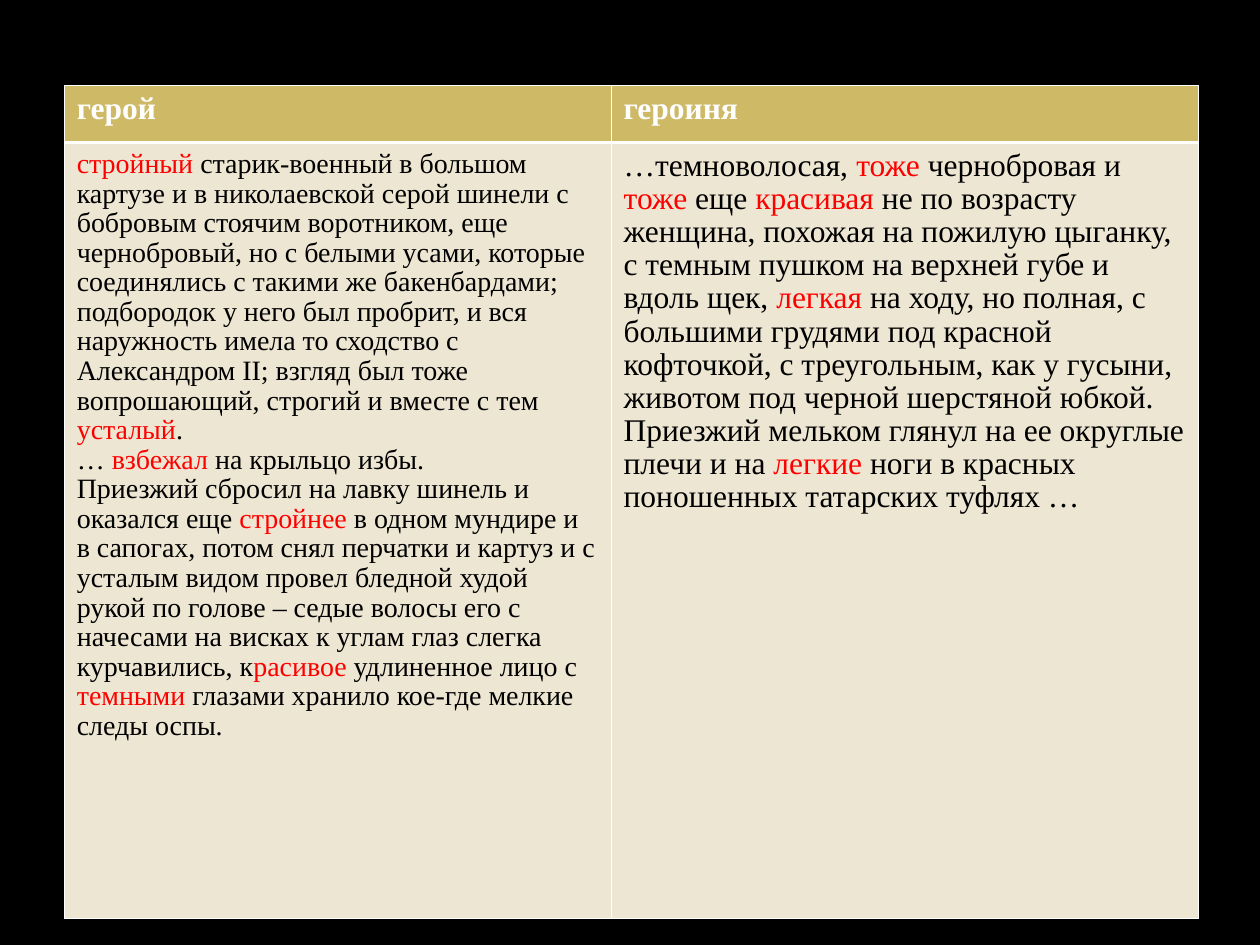
from lxml.etree import SubElement
from pptx import Presentation
from pptx.dml.color import RGBColor
from pptx.oxml.ns import qn
from pptx.util import Inches, Pt

BLACK = RGBColor(0x00, 0x00, 0x00)
WHITE = RGBColor(0xFF, 0xFF, 0xFF)
RED = RGBColor(0xFF, 0x00, 0x00)
GOLD = RGBColor(0xCE, 0xB9, 0x66)
CREAM = RGBColor(0xED, 0xE6, 0xD3)
FONT = "Times New Roman"
THIN, THICK = 0.45, 1.47

# Words between asterisks are red.
HEADS = ["герой", "героиня"]
HERO = [
    "*стройный *старик-военный в большом картузе и в николаевской серой шинели "
    "с бобровым стоячим воротником, еще чернобровый, но с белыми усами, которые "
    "соединялись с такими же бакенбардами; подбородок у него был пробрит, и вся "
    "наружность имела то сходство с Александром II; взгляд был тоже "
    "вопрошающий, строгий и вместе с тем *усталый*.",
    "… *взбежал *на крыльцо избы.",
    "Приезжий сбросил на лавку шинель и оказался еще *стройнее* в одном мундире "
    "и в сапогах, потом снял перчатки и картуз и с усталым видом провел бледной "
    "худой рукой по голове – седые волосы его с начесами на висках к углам глаз "
    "слегка курчавились, к*расивое* удлиненное лицо с *темными* глазами хранило "
    "кое-где мелкие следы оспы.",
]
HEROINE = [
    "…темноволосая, *тоже *чернобровая и *тоже *еще *красивая *не по возрасту "
    "женщина, похожая на пожилую цыганку, с темным пушком на верхней губе и "
    "вдоль щек, *легкая* на ходу, но полная, с большими грудями под красной "
    "кофточкой, с треугольным, как у гусыни, животом под черной шерстяной юбкой.",
    "Приезжий мельком глянул на ее округлые плечи и на *легкие* ноги в красных "
    "поношенных татарских туфлях …",
]
BODIES = [(HERO, 16), (HEROINE, 18)]
LEFT, TOP = 0.51, 0.68
WIDTHS = [4.34, 4.66]
HEIGHTS = [0.45, 6.16]


def write(cell, paras, size=18, color=BLACK, bold=False):
    frame = cell.text_frame
    for i, text in enumerate(paras):
        para = frame.add_paragraph() if i else frame.paragraphs[0]
        para.line_spacing = 0.95
        for j, part in enumerate(text.split("*")):
            if not part:
                continue
            run = para.add_run()
            run.text = part
            font = run.font
            font.name, font.size, font.bold = FONT, Pt(size), bold
            font.color.rgb = RED if j % 2 else color


def style(cell, fill, top, bottom):
    """Set the margins, white borders and fill of a cell."""
    cell.margin_left = cell.margin_right = Inches(0.1)
    cell.margin_top, cell.margin_bottom = Inches(0.06), Inches(0.05)
    props = cell._tc.get_or_add_tcPr()
    for side, width in zip("LRTB", (THIN, THIN, top, bottom)):
        line = SubElement(props, qn(f"a:ln{side}"), w=str(int(Pt(width))))
        solid = SubElement(line, qn("a:solidFill"))
        SubElement(solid, qn("a:srgbClr"), val=str(WHITE))
    cell.fill.solid()
    cell.fill.fore_color.rgb = fill


def main():
    deck = Presentation()
    deck.slide_width, deck.slide_height = Inches(10), Inches(7.5)
    slide = deck.slides.add_slide(deck.slide_layouts[6])
    slide.background.fill.solid()
    slide.background.fill.fore_color.rgb = BLACK

    table = slide.shapes.add_table(
        len(HEIGHTS), len(WIDTHS), Inches(LEFT), Inches(TOP),
        Inches(sum(WIDTHS)), Inches(sum(HEIGHTS))).table
    for row, height in zip(table.rows, HEIGHTS):
        row.height = Inches(height)
    for col, width in zip(table.columns, WIDTHS):
        col.width = Inches(width)

    for i, (head, (paras, size)) in enumerate(zip(HEADS, BODIES)):
        top, body = table.cell(0, i), table.cell(1, i)
        style(top, GOLD, THIN, THICK)
        write(top, [head], color=WHITE, bold=True)
        style(body, CREAM, THICK, THIN)
        write(body, paras, size=size)
    deck.save("out.pptx")


if __name__ == "__main__":
    main()
